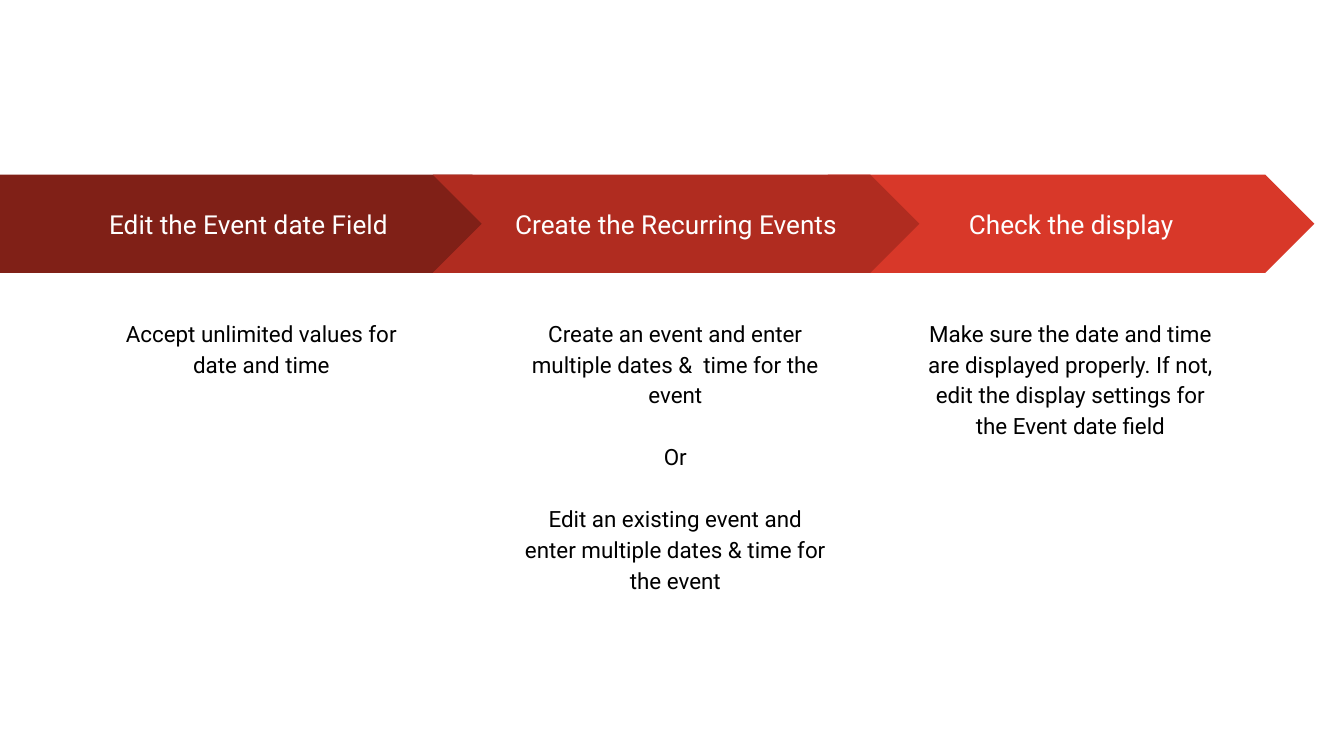
from dataclasses import dataclass
from pptx import Presentation
from pptx import util as u
from pptx.dml.color import RGBColor
from pptx.enum import shapes, text


@dataclass(frozen=True)
class Theme:
    font: str = "Roboto"
    shades: tuple = ("802017", "B02C20", "D83829")
    light: str = "FFFFFF"
    dark: str = "000000"
    head: int = 14
    body: int = 12
    lead: float = 1.15
    gap: float = 16.5


@dataclass(frozen=True)
class Grid:
    wide: float = 10
    ratio: float = 9 / 16
    start: float = 0.28
    step: float = 2.94
    band: tuple = (1.3, 3.62, 0.73)
    first: float = 3.88
    note: tuple = (2.25, 2.45, 2.86)
    inset: tuple = (0.44, 0.58, 0.58)

    def left(self, col):
        return self.start + col * self.step


THEME = Theme()
GRID = Grid()
STEPS = [
    ("Edit the Event date Field", ["Accept unlimited values for date and time"]),
    ("Create the Recurring Events", [
        "Create an event and enter multiple dates &  time for the event",
        "Or",
        "Edit an existing event and enter multiple dates & time for the event",
    ]),
    ("Check the display", [
        "Make sure the date and time are displayed properly. "
        "If not, edit the display settings for the Event date field",
    ]),
]


def write(shape, lines, size, color, lead=1.0):
    frame = shape.text_frame
    frame.word_wrap = True
    frame.margin_left = frame.margin_right = u.Inches(0.1)
    frame.margin_top = frame.margin_bottom = u.Inches(0.1)
    frame.text = "\n".join(lines)
    for row, para in enumerate(frame.paragraphs):
        para.alignment = text.PP_ALIGN.CENTER
        para.line_spacing = lead
        para.space_before = u.Pt(THEME.gap if row else 0)
        for run in para.runs:
            run.font.name = THEME.font
            run.font.size = u.Pt(size)
            run.font.color.rgb = RGBColor.from_string(color)
    return frame


def arrow(slide, col, label):
    top, width, height = GRID.band
    kind, left = shapes.MSO_SHAPE.CHEVRON, GRID.left(col)
    if col == 0:
        kind, left, width = shapes.MSO_SHAPE.PENTAGON, 0, GRID.first
    shape = slide.shapes.add_shape(kind, *map(u.Inches, (left, top, width, height)))
    shape.adjustments[0] = 0.5
    shape.shadow.inherit = False
    shape.fill.solid()
    shape.fill.fore_color.rgb = RGBColor.from_string(THEME.shades[col])
    shape.line.fill.background()
    frame = write(shape, [label], THEME.head, THEME.light)
    frame.vertical_anchor = text.MSO_ANCHOR.MIDDLE


def note(slide, col, lines):
    top, width, height = GRID.note
    left = GRID.left(col) + GRID.inset[col]
    box = slide.shapes.add_textbox(*map(u.Inches, (left, top, width, height)))
    write(box, lines, THEME.body, THEME.dark, THEME.lead)


def main():
    deck = Presentation()
    deck.slide_width = u.Inches(GRID.wide)
    deck.slide_height = u.Inches(GRID.wide * GRID.ratio)
    slide = deck.slides.add_slide(deck.slide_layouts[6])
    for col in (2, 0, 1):
        label, lines = STEPS[col]
        arrow(slide, col, label)
        note(slide, col, lines)
    deck.save("out.pptx")


if __name__ == "__main__":
    main()
